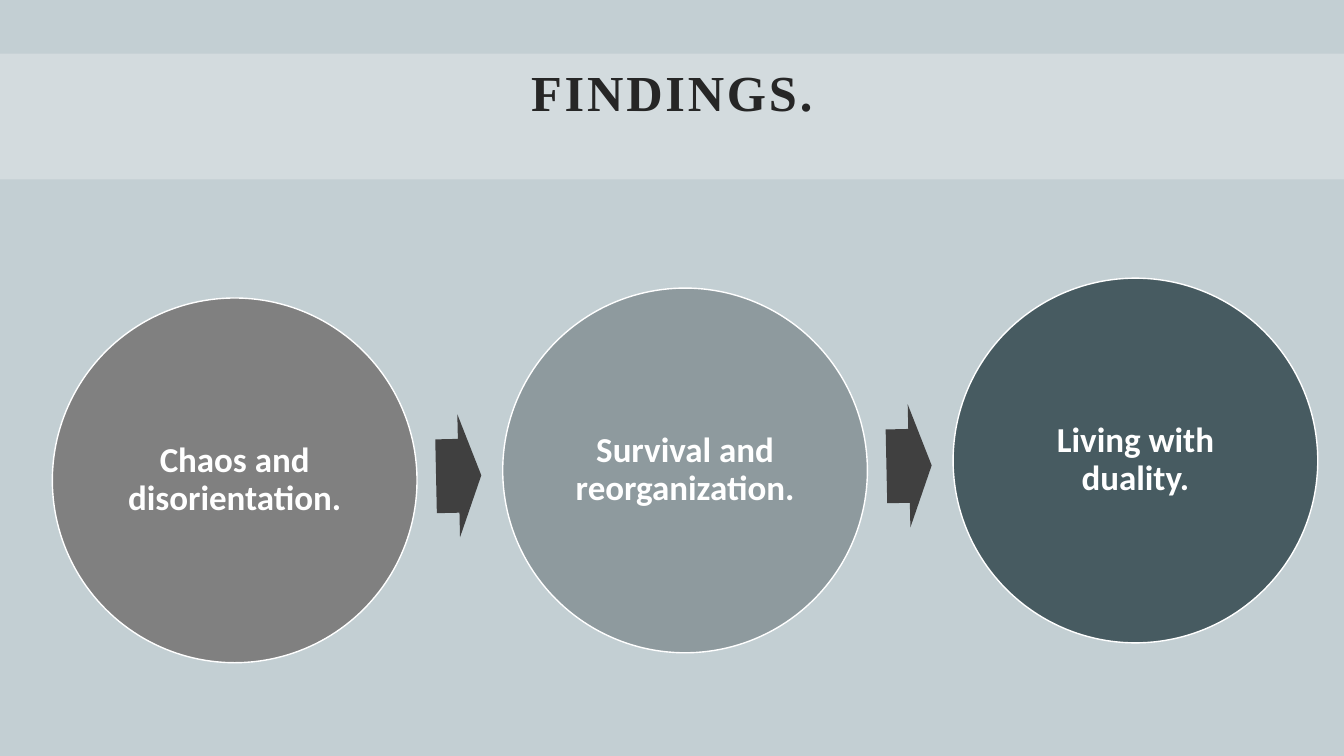
from dataclasses import dataclass
from typing import Any

from lxml.etree import SubElement
from pptx import Presentation
from pptx.dml.color import RGBColor
from pptx.enum.shapes import MSO_SHAPE
from pptx.enum.text import MSO_ANCHOR, PP_ALIGN
from pptx.oxml.ns import qn
from pptx.shapes.autoshape import Shape
from pptx.slide import Slide
from pptx.util import Cm, Pt


@dataclass(frozen=True)
class Theme:
    background: str = "C3CFD3"
    band: str = "D7DFE1"
    heading: str = "262626"
    arrow: str = "404040"
    light: str = "FFFFFF"
    heading_font: str = "Times New Roman"
    stage_font: str = "Calibri"
    heading_size: float = 36
    stage_size: float = 25


@dataclass(frozen=True)
class Box:
    left: float
    top: float
    width: float
    height: float

    def moved(self, steps: int) -> "Box":
        return Box(self.left + steps * STAGE_PITCH, self.top - steps * STAGE_RISE,
                   self.width, self.height)


@dataclass(frozen=True)
class Stage:
    label: str
    color: str


THEME = Theme()
SLIDE_WIDTH, SLIDE_HEIGHT = 33.87, 19.05
STAGE_PITCH, STAGE_RISE = 11.35, 0.25
HEADING_BAND = Box(0, 1.35, SLIDE_WIDTH, 3.17)
FIRST_CIRCLE = Box(1.32, 7.51, 9.19, 9.19)
FIRST_ARROW = Box(10.99, 10.44, 1.14, 3.1)
ARROW_TILT = -1.25
STAGES = (
    Stage("Chaos and disorientation.", "808080"),
    Stage("Survival and reorganization.", "8E9A9E"),
    Stage("Living with duality.", "475B61"),
)


def apply_format(target: Any, values: dict[str, Any]) -> None:
    for attribute, value in values.items():
        setattr(target, attribute, value)


def add_filled(slide: Slide, kind: MSO_SHAPE, box: Box, color: str) -> Shape:
    shape = slide.shapes.add_shape(
        kind, Cm(box.left), Cm(box.top), Cm(box.width), Cm(box.height))
    shape.shadow.inherit = False
    shape.fill.solid()
    shape.fill.fore_color.rgb = RGBColor.from_string(color)
    shape.line.fill.background()
    return shape


def write_text(shape: Shape, text: str, font: dict[str, Any], color: str,
               frame: dict[str, Any]) -> None:
    apply_format(shape.text_frame, {"word_wrap": True} | frame)
    paragraph = shape.text_frame.paragraphs[0]
    apply_format(paragraph, {"alignment": PP_ALIGN.CENTER, "line_spacing": 0.9})
    run = paragraph.add_run()
    run.text = text
    apply_format(run.font, {"bold": True} | font)
    run.font.color.rgb = RGBColor.from_string(color)


def add_heading(slide: Slide, text: str) -> None:
    band = add_filled(slide, MSO_SHAPE.RECTANGLE, HEADING_BAND, THEME.band)
    band_color = band.fill._xPr.find(qn("a:solidFill"))[0]
    SubElement(band_color, qn("a:alpha")).set("val", "80000")
    write_text(band, text,
               {"name": THEME.heading_font, "size": Pt(THEME.heading_size)}, THEME.heading,
               {"vertical_anchor": MSO_ANCHOR.TOP, "margin_top": Cm(0.36)})
    heading_run = band.text_frame.paragraphs[0].runs[0]
    heading_run._r.get_or_add_rPr().set("spc", "200")


def add_stage(slide: Slide, stage: Stage, position: int) -> None:
    circle = add_filled(slide, MSO_SHAPE.OVAL, FIRST_CIRCLE.moved(position), stage.color)
    circle.line.color.rgb = RGBColor.from_string(THEME.light)
    circle.line.width = Pt(1)
    sides = ("left", "top", "right", "bottom")
    write_text(circle, stage.label,
               {"name": THEME.stage_font, "size": Pt(THEME.stage_size)}, THEME.light,
               {"vertical_anchor": MSO_ANCHOR.MIDDLE}
               | {f"margin_{side}": Cm(0.08) for side in sides})


def add_stage_arrow(slide: Slide, position: int) -> None:
    arrow = add_filled(slide, MSO_SHAPE.RIGHT_ARROW, FIRST_ARROW.moved(position), THEME.arrow)
    arrow.rotation = ARROW_TILT
    arrow.adjustments[0] = 0.6
    arrow.adjustments[1] = 0.5


def main() -> None:
    presentation = Presentation()
    apply_format(presentation, {"slide_width": Cm(SLIDE_WIDTH), "slide_height": Cm(SLIDE_HEIGHT)})
    slide = presentation.slides.add_slide(presentation.slide_layouts[6])
    slide.background.fill.solid()
    slide.background.fill.fore_color.rgb = RGBColor.from_string(THEME.background)
    add_heading(slide, "FINDINGS.")
    for position, stage in enumerate(STAGES):
        add_stage(slide, stage, position)
        if position < len(STAGES) - 1:
            add_stage_arrow(slide, position)
    presentation.save("out.pptx")


if __name__ == "__main__":
    main()
